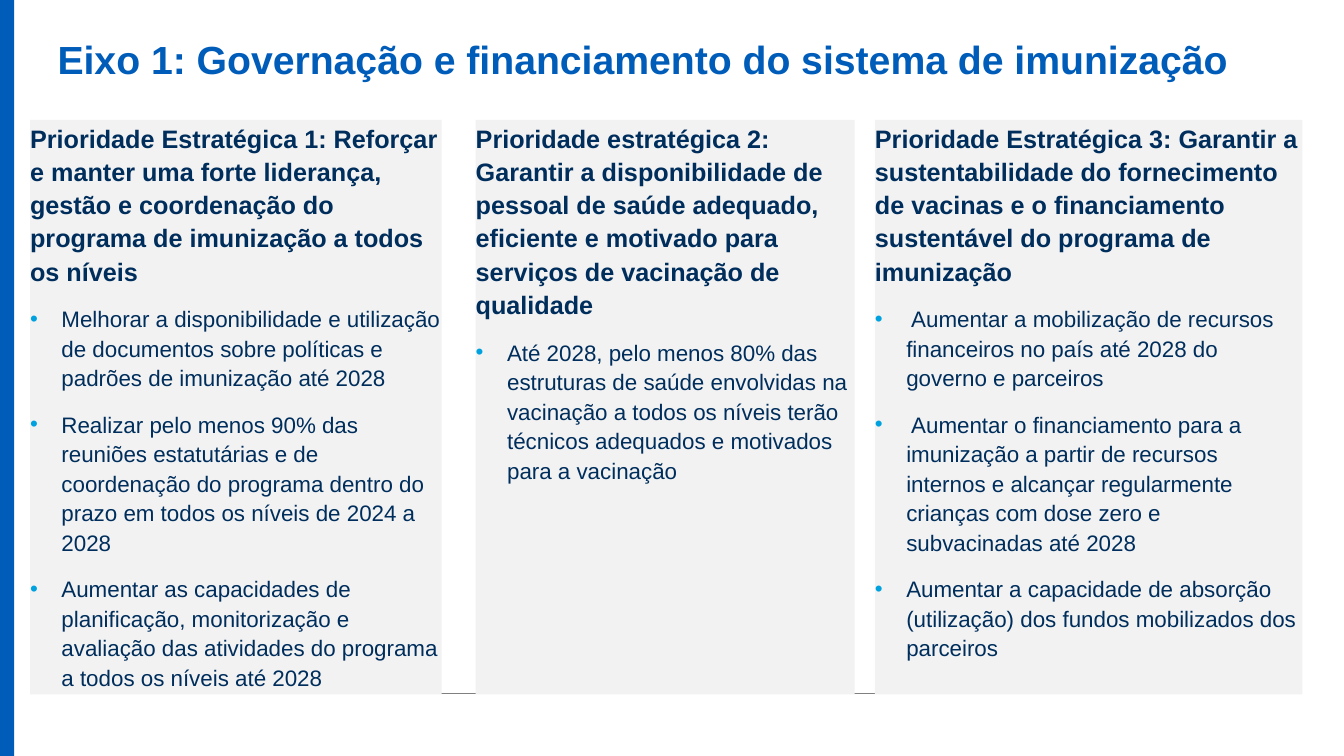
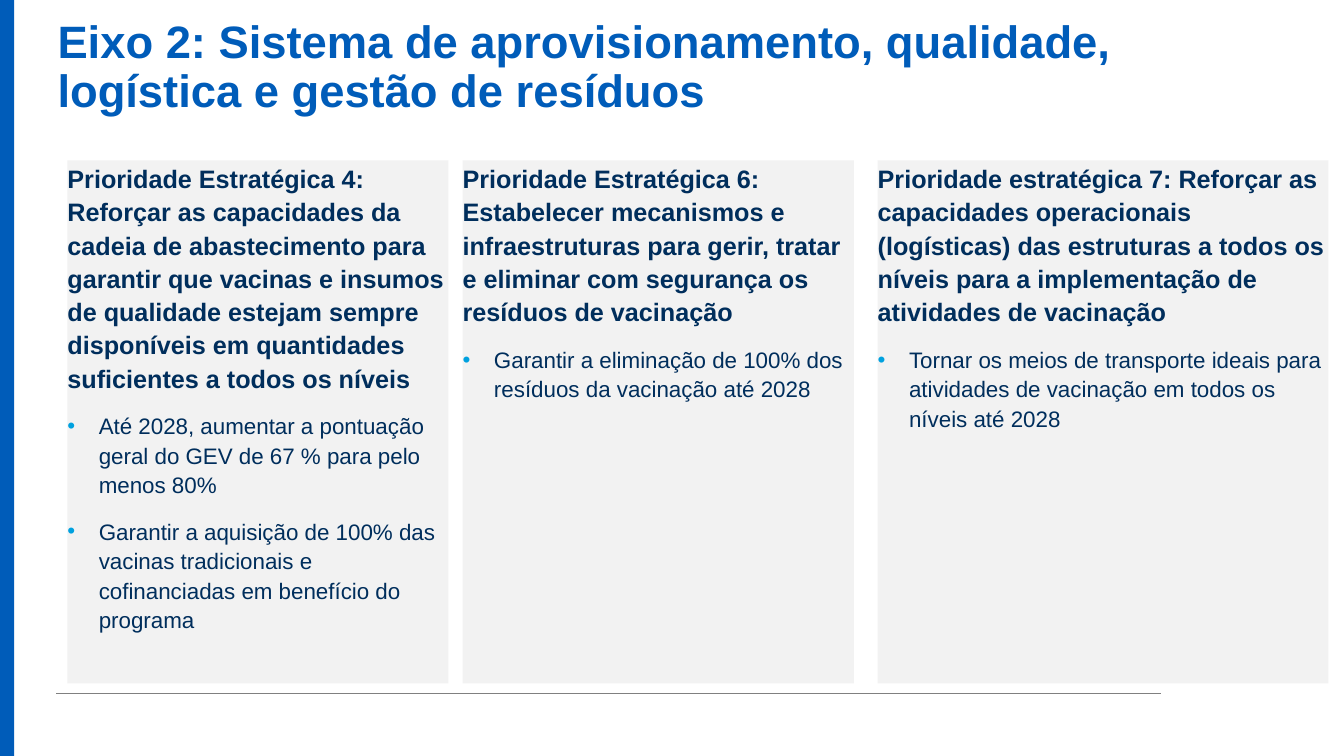
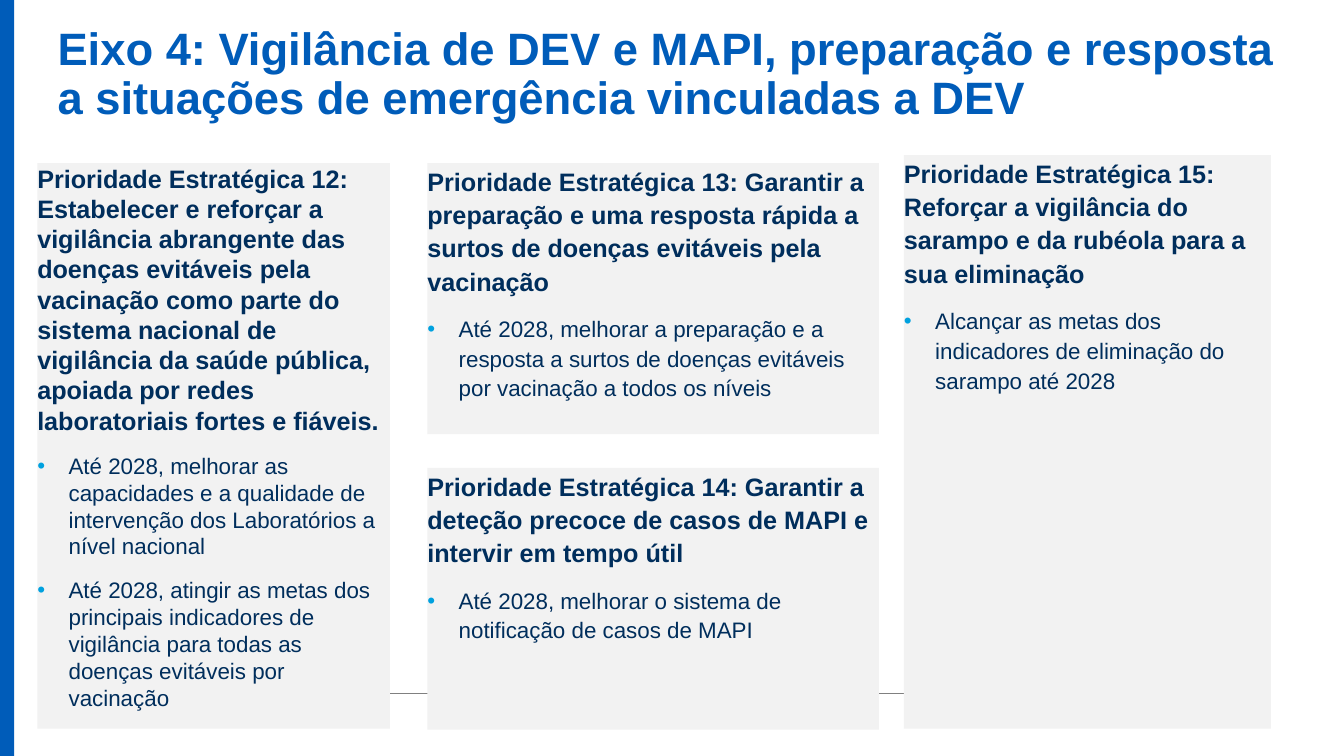
from collections import namedtuple

from lxml.etree import SubElement
from pptx import Presentation
from pptx.dml.color import RGBColor
from pptx.enum.shapes import MSO_CONNECTOR as Connector, MSO_SHAPE as Shape
from pptx.enum.text import MSO_ANCHOR as Anchor, MSO_AUTO_SIZE as AutoSize, PP_ALIGN as Align
from pptx.oxml.ns import qn
from pptx.util import Cm, Pt

COLORS = {
    "blue": "005CB9",
    "navy": "002E5C",
    "bullet": "00A1DF",
    "panel": "F2F2F2",
    "rule": "808080",
}
FONT = "Arial"
INDENT = Cm(0.79)

Box = namedtuple("Box", "left top width height")
Panel = namedtuple("Panel", "box heading goals spacing", defaults=[1.1])
Axis = namedtuple("Axis", "title title_box title_size panels")

PAGE = Box(0, 0, 33.87, 19.05)

AXES = [
    Axis(
        "Eixo 1: Governação e financiamento do sistema de imunização",
        Box(1.45, 1.02, 30.99, 1.65), 28,
        [
            Panel(
                Box(0.76, 3.02, 10.37, 14.48),
                "Prioridade Estratégica 1: Reforçar e manter uma forte liderança, gestão e "
                "coordenação do programa de imunização a todos os níveis",
                [
                    "Melhorar a disponibilidade e utilização de documentos sobre políticas e "
                    "padrões de imunização até 2028",
                    "Realizar pelo menos 90% das reuniões estatutárias e de coordenação do "
                    "programa dentro do prazo em todos os níveis de 2024 a 2028",
                    "Aumentar as capacidades de planificação, monitorização e avaliação das "
                    "atividades do programa a todos os níveis até 2028",
                ],
            ),
            Panel(
                Box(11.99, 3.02, 9.55, 14.48),
                "Prioridade estratégica 2: Garantir a disponibilidade de pessoal de saúde "
                "adequado, eficiente e motivado para serviços de vacinação de qualidade",
                [
                    "Até 2028, pelo menos 80% das estruturas de saúde envolvidas na vacinação a "
                    "todos os níveis terão técnicos adequados e motivados para a vacinação",
                ],
            ),
            Panel(
                Box(22.05, 3.02, 10.77, 14.48),
                "Prioridade Estratégica 3: Garantir a sustentabilidade do fornecimento de "
                "vacinas e o financiamento sustentável do programa de imunização",
                [
                    " Aumentar a mobilização de recursos financeiros no país até 2028 do governo "
                    "e parceiros",
                    " Aumentar o financiamento para a imunização a partir de recursos internos e "
                    "alcançar regularmente crianças com dose zero e subvacinadas até 2028",
                    "Aumentar a capacidade de absorção (utilização) dos fundos mobilizados dos "
                    "parceiros",
                ],
            ),
        ],
    ),
    Axis(
        "Eixo 2: Sistema de aprovisionamento, qualidade, logística e gestão de resíduos",
        Box(1.45, 0.48, 30.99, 2.59), 32.4,
        [
            Panel(
                Box(1.7, 4.04, 9.6, 13.18),
                "Prioridade Estratégica 4: Reforçar as capacidades da cadeia de abastecimento "
                "para garantir que vacinas e insumos de qualidade estejam sempre disponíveis em "
                "quantidades suficientes a todos os níveis",
                [
                    "Até 2028, aumentar a pontuação geral do GEV de 67 % para pelo menos 80%",
                    "Garantir a aquisição de 100% das vacinas tradicionais e cofinanciadas em "
                    "benefício do programa",
                ],
            ),
            Panel(
                Box(11.66, 4.04, 9.86, 13.18),
                "Prioridade Estratégica 6: Estabelecer mecanismos e infraestruturas para gerir, "
                "tratar e eliminar com segurança os resíduos de vacinação",
                ["Garantir a eliminação de 100% dos resíduos da vacinação até 2028"],
            ),
            Panel(
                Box(22.12, 4.04, 11.36, 13.18),
                "Prioridade estratégica 7: Reforçar as capacidades operacionais (logísticas) das "
                "estruturas a todos os níveis para a implementação de atividades de vacinação",
                [
                    "Tornar os meios de transporte ideais para atividades de vacinação em todos "
                    "os níveis até 2028",
                ],
            ),
        ],
    ),
    Axis(
        "Eixo 4: Vigilância de DEV e MAPI, preparação e resposta a situações de emergência "
        "vinculadas a DEV",
        Box(1.45, 0.66, 30.99, 1.65), 32.4,
        [
            Panel(
                Box(0.94, 4.11, 8.89, 14.25),
                "Prioridade Estratégica 12: Estabelecer e reforçar a vigilância abrangente das "
                "doenças evitáveis pela vacinação como parte do sistema nacional de vigilância "
                "da saúde pública, apoiada por redes laboratoriais fortes e fiáveis.",
                [
                    "Até 2028, melhorar as capacidades e a qualidade de intervenção dos "
                    "Laboratórios a nível nacional",
                    "Até 2028, atingir as metas dos principais indicadores de vigilância para "
                    "todas as doenças evitáveis por vacinação",
                ],
                1.0,
            ),
            Panel(
                Box(10.77, 4.11, 11.38, 6.83),
                "Prioridade Estratégica 13: Garantir a preparação e uma resposta rápida a surtos "
                "de doenças evitáveis pela vacinação",
                [
                    "Até 2028, melhorar a preparação e a resposta a surtos de doenças evitáveis "
                    "por vacinação a todos os níveis",
                ],
            ),
            Panel(
                Box(10.77, 11.79, 11.38, 6.6),
                "Prioridade Estratégica 14: Garantir a deteção precoce de casos de MAPI e "
                "intervir em tempo útil",
                ["Até 2028, melhorar o sistema de notificação de casos de MAPI"],
            ),
            Panel(
                Box(22.78, 3.91, 9.25, 14.45),
                "Prioridade Estratégica 15: Reforçar a vigilância do sarampo e da rubéola para a "
                "sua eliminação",
                ["Alcançar as metas dos indicadores de eliminação do sarampo até 2028"],
            ),
        ],
    ),
]


def color(name):
    return RGBColor.from_string(COLORS[name])


def add_block(page, box, fill):
    block = page.shapes.add_shape(Shape.RECTANGLE, *map(Cm, box))
    block.shadow.inherit = False
    block.fill.solid()
    block.fill.fore_color.rgb = color(fill)
    block.line.fill.background()
    return block


def prepare_frame(frame):
    frame.word_wrap = True
    frame.auto_size = AutoSize.NONE
    frame.vertical_anchor = Anchor.TOP
    frame.margin_left = frame.margin_top = frame.margin_right = frame.margin_bottom = 0


def add_span(para, text, size, ink, bold):
    span = para.add_run()
    span.text = text
    span.font.name = FONT
    span.font.size = Pt(size)
    span.font.bold = bold
    span.font.color.rgb = color(ink)


def add_bullet(para):
    properties = para._p.get_or_add_pPr()
    properties.set("marL", str(INDENT))
    properties.set("indent", str(-INDENT))
    tint = SubElement(properties, qn("a:buClr"))
    SubElement(tint, qn("a:srgbClr"), val=COLORS["bullet"])
    SubElement(properties, qn("a:buFont"), typeface=FONT)
    SubElement(properties, qn("a:buChar"), char="•")


def add_backdrop(page, box):
    add_block(page, Box(box.left, box.top, 0.36, box.height), "blue")
    level = Cm(box.top + 17.48)
    rule = page.shapes.add_connector(
        Connector.STRAIGHT, Cm(box.left + 1.42), level, Cm(box.left + 29.26), level
    )
    rule.line.color.rgb = color("rule")
    rule.line.width = Pt(0.5)
    SubElement(rule._element.spPr, qn("a:effectLst"))


def place_title(page, box, text, size):
    title = page.shapes.title
    title.left, title.top, title.width, title.height = map(Cm, box)
    prepare_frame(title.text_frame)
    para = title.text_frame.paragraphs[0]
    para.alignment = Align.LEFT
    para.line_spacing = 0.9
    add_span(para, text, size, "blue", True)


def add_panel(page, panel):
    frame = add_block(page, panel.box, "panel").text_frame
    prepare_frame(frame)
    for index, text in enumerate([panel.heading, *panel.goals]):
        para = frame.add_paragraph() if index else frame.paragraphs[0]
        if index:
            add_bullet(para)
        para.alignment = Align.LEFT
        para.line_spacing = panel.spacing
        para.space_after = Pt(12)
        add_span(para, text, 16 if index else 18, "navy", not index)


def add_axis_page(deck, axis):
    page = deck.slides.add_slide(deck.slide_layouts[5])
    add_backdrop(page, PAGE)
    place_title(page, axis.title_box, axis.title, axis.title_size)
    for panel in axis.panels:
        add_panel(page, panel)


def main():
    deck = Presentation()
    deck.slide_width, deck.slide_height = Cm(PAGE.width), Cm(PAGE.height)
    for axis in AXES:
        add_axis_page(deck, axis)
    deck.save("out.pptx")


if __name__ == "__main__":
    main()
